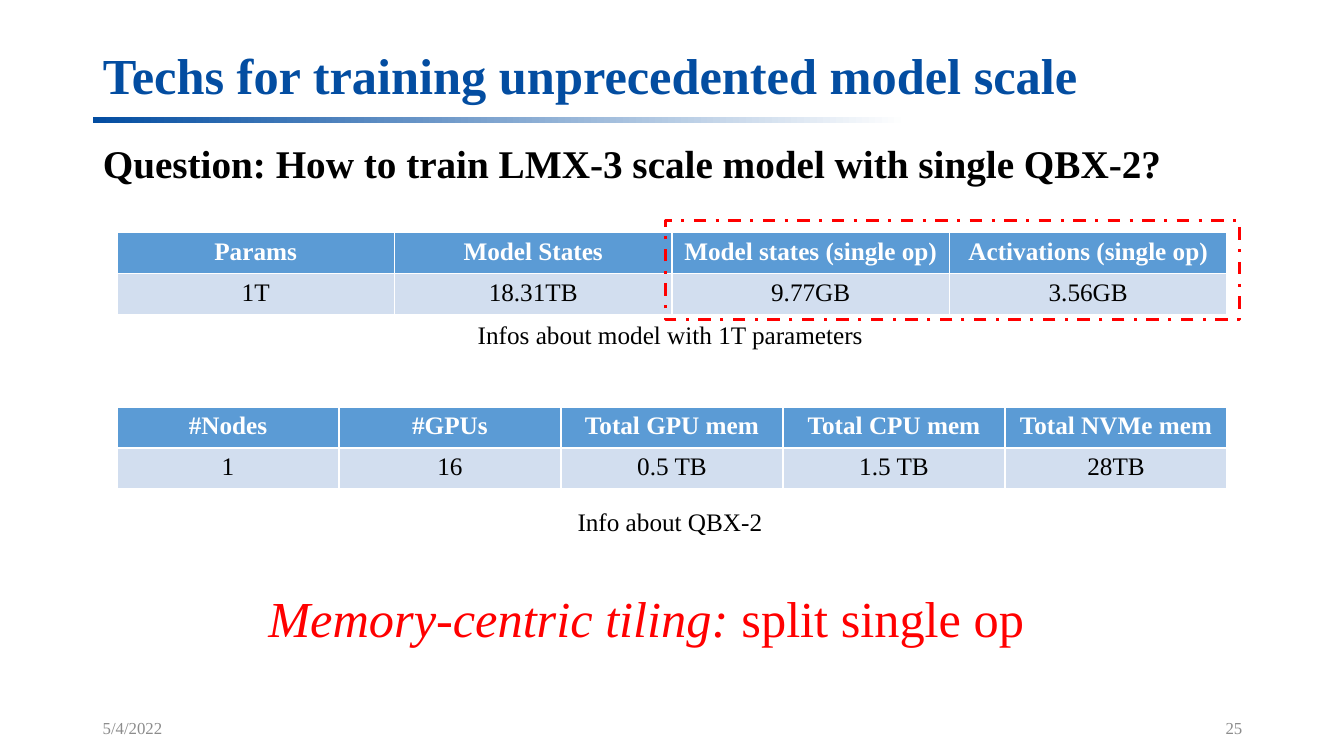
"""Build a slide on training a very large model on a single server."""
from dataclasses import dataclass

from lxml import etree
from pptx import Presentation
from pptx.dml.color import RGBColor as Color
from pptx.enum.dml import MSO_LINE_DASH_STYLE as Dash
from pptx.enum.shapes import MSO_SHAPE as Shape
from pptx.enum.text import MSO_ANCHOR as Anchor, MSO_AUTO_SIZE as AutoSize, PP_ALIGN as Align
from pptx.oxml.ns import qn
from pptx.util import Inches, Pt


@dataclass(frozen=True)
class Theme:
    font: str = "Times New Roman"
    navy: Color = Color(0x03, 0x4D, 0xA1)
    header: Color = Color(0x5B, 0x9B, 0xD5)
    row: Color = Color(0xD2, 0xDE, 0xEF)
    red: Color = Color(0xFF, 0x00, 0x00)
    gray: Color = Color(0x8C, 0x8C, 0x8C)
    black: Color = Color(0x00, 0x00, 0x00)
    white: Color = Color(0xFF, 0xFF, 0xFF)
    large: Pt = Pt(36)
    heading: Pt = Pt(28)
    text: Pt = Pt(18)
    small: Pt = Pt(12)


theme = Theme()


def write(para, text, size, color, **styles):
    span = para.add_run()
    span.text = text
    span.font.color.rgb = color
    for name, value in {"name": theme.font, "size": size, **styles}.items():
        setattr(span.font, name, value)


def place(shape, left, top, width, height):
    for name, value in zip(("left", "top", "width", "height"), (left, top, width, height)):
        setattr(shape, name, Inches(value))


deck = Presentation()
deck.slide_width, deck.slide_height = Inches(13.33), Inches(7.5)
page = deck.slides.add_slide(deck.slide_layouts[1])
shapes = page.shapes

title, body = shapes.title, page.placeholders[1]
place(title, 0.92, 0.4, 11.5, 0.75)
place(body, 0.92, 1.33, 11.5, 5.43)
for holder, anchor in ((title, Anchor.MIDDLE), (body, Anchor.TOP)):
    holder.text_frame.auto_size = AutoSize.NONE
    holder.text_frame.vertical_anchor = anchor

heading = title.text_frame.paragraphs[0]
heading.alignment = Align.LEFT
heading.line_spacing = 0.9
write(heading, "Techs for training unprecedented model scale", theme.large, theme.navy, bold=True)

question = body.text_frame.paragraphs[0]
question.space_before = Pt(10)
settings = question._p.get_or_add_pPr()
settings.set("marL", "0")
settings.set("indent", "0")
etree.SubElement(settings, qn("a:buNone"))
write(question, "Question: How to train LMX-3 scale model with single QBX-2?",
      theme.heading, theme.black, bold=True)

rule = shapes.add_shape(Shape.RECTANGLE, Inches(0.92), Inches(1.16), Inches(8.08), Inches(0.06))
rule.shadow.inherit = False
rule.line.fill.background()
rule.fill.gradient()
rule.fill.gradient_angle = 0
for stop, position, color in zip(rule.fill.gradient_stops, (0, 1), (theme.navy, theme.white)):
    stop.position = position
    stop.color.rgb = color

tables = [
    (2.31, [["Params", "Model States", "Model states (single op)", "Activations (single op)"],
            ["1T", "18.31TB", "9.77GB", "3.56GB"]]),
    (4.04, [["#Nodes", "#GPUs", "Total GPU mem", "Total CPU mem", "Total NVMe mem"],
            ["1", "16", "0.5 TB", "1.5 TB", "28TB"]]),
]
row_styles = [(theme.header, theme.white, True), (theme.row, theme.black, False)]
for top, rows in tables:
    table = shapes.add_table(len(rows), len(rows[0]), Inches(1.16), Inches(top),
                             Inches(11.01), Inches(0.81)).table
    for r, (values, (fill, color, bold)) in enumerate(zip(rows, row_styles)):
        for c, value in enumerate(values):
            cell = table.cell(r, c)
            cell.fill.solid()
            cell.fill.fore_color.rgb = fill
            para = cell.text_frame.paragraphs[0]
            para.alignment = Align.CENTER
            write(para, value, theme.text, color, bold=bold)

focus = shapes.add_shape(Shape.RECTANGLE, Inches(6.6), Inches(2.19), Inches(5.69), Inches(0.98))
focus.shadow.inherit = False
focus.fill.background()
focus.line.color.rgb = theme.red
focus.line.width = Pt(2.25)
focus.line.dash_style = Dash.DASH_DOT

labels = [
    ((4.64, 3.12, 4.06, 0.4), Align.LEFT, Anchor.TOP, False, theme.text, theme.black,
     [("Infos about model with 1T parameters", False)]),
    ((5.63, 4.97, 2.07, 0.4), Align.LEFT, Anchor.TOP, False, theme.text, theme.black,
     [("Info about QBX-2", False)]),
    ((2.52, 5.78, 7.78, 0.71), Align.CENTER, Anchor.TOP, False, theme.large, theme.red,
     [("Memory-centric tiling:", True), (" split single op", False)]),
    ((0.92, 7.02, 3, 0.4), Align.LEFT, Anchor.MIDDLE, True, theme.small, theme.gray,
     [("5/4/2022", False)]),
    ((9.42, 7.02, 3, 0.4), Align.RIGHT, Anchor.MIDDLE, True, theme.small, theme.gray,
     [("25", False)]),
]
for area, alignment, anchor, wrap, size, color, parts in labels:
    box = shapes.add_textbox(*map(Inches, area))
    frame = box.text_frame
    frame.word_wrap = wrap
    frame.vertical_anchor = anchor
    para = frame.paragraphs[0]
    para.alignment = alignment
    for text, italic in parts:
        write(para, text, size, color, italic=italic)

deck.save("out.pptx")
